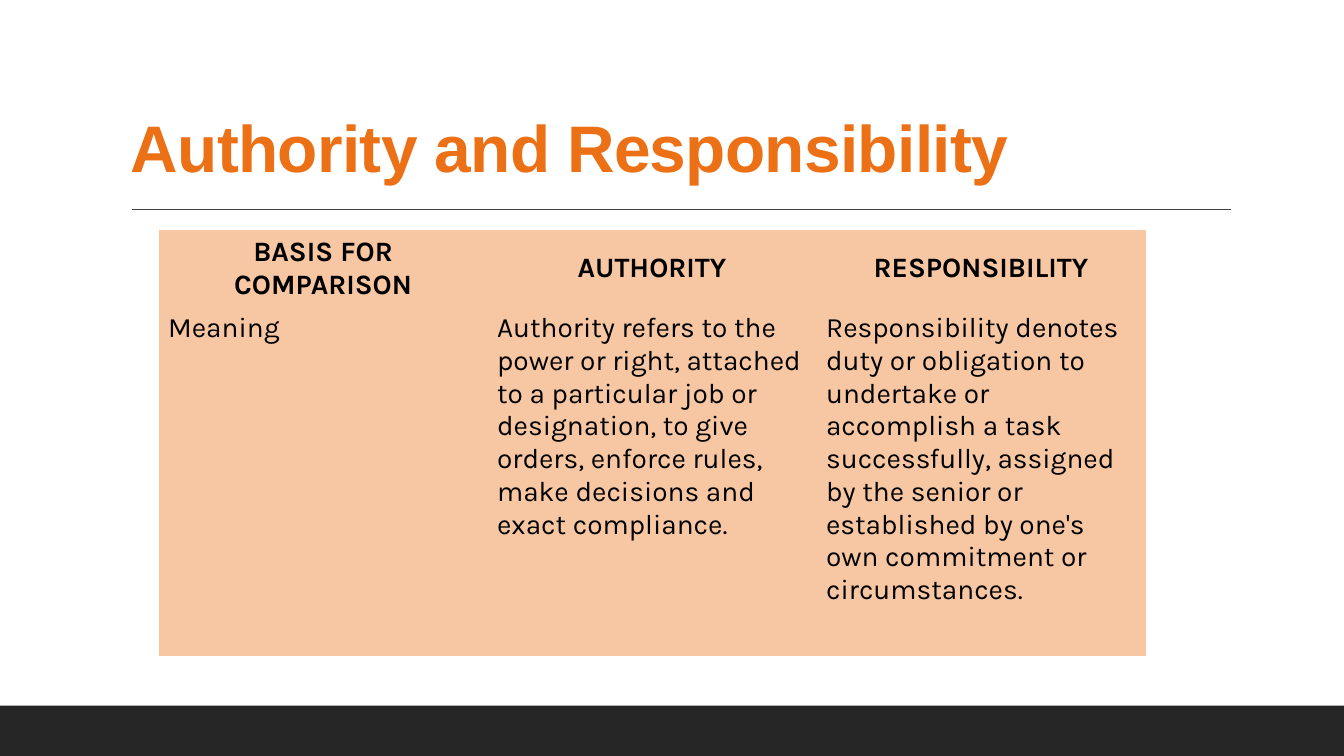
from pptx import Presentation
from pptx.dml.color import RGBColor
from pptx.enum.shapes import MSO_CONNECTOR, MSO_SHAPE
from pptx.enum.text import MSO_ANCHOR, PP_ALIGN
from pptx.oxml.ns import qn
from pptx.util import Pt
from lxml.etree import SubElement

COLORS = {
    "footer": "262626",
    "rule": "404040",
    "title": "EC7016",
    "cell": "F7C6A2",
    "text": "000000",
}
PLAIN_TABLE_STYLE = "{2D5ABB26-0587-4C30-8999-92F81FD0307C}"
COMPARISON = [
    ["BASIS FOR COMPARISON", "AUTHORITY", "RESPONSIBILITY"],
    [
        "Meaning",
        "Authority refers to the power or right, attached to a particular job or "
        "designation, to give orders, enforce rules, make decisions and exact compliance.",
        "Responsibility denotes duty or obligation to undertake or accomplish a task "
        "successfully, assigned by the senior or established by one's own commitment "
        "or circumstances.",
    ],
]


def color(name):
    return RGBColor.from_string(COLORS[name])


def format_run(run, font_name, size, color_name, bold):
    run.font.name = font_name
    run.font.size = Pt(size)
    run.font.bold = bold
    run.font.color.rgb = color(color_name)


def add_footer_band(slide):
    shape = slide.shapes.add_shape(MSO_SHAPE.RECTANGLE, Pt(0), Pt(504), Pt(960), Pt(36))
    shape.shadow.inherit = False
    shape.fill.solid()
    shape.fill.fore_color.rgb = color("footer")
    shape.line.fill.background()


def add_rule(slide):
    connector = slide.shapes.add_connector(
        MSO_CONNECTOR.STRAIGHT, Pt(94.3), Pt(149.5), Pt(879), Pt(149.5)
    )
    connector.line.color.rgb = color("rule")
    connector.line.width = Pt(1)
    SubElement(connector._element.spPr, qn("a:effectLst"))


def add_title(slide, text):
    shape = slide.shapes.add_textbox(Pt(86.4), Pt(22.5), Pt(792), Pt(114.5))
    text_frame = shape.text_frame
    text_frame.word_wrap = True
    text_frame.vertical_anchor = MSO_ANCHOR.BOTTOM
    text_frame.text = text
    paragraph = text_frame.paragraphs[0]
    paragraph.line_spacing = 0.9
    run = paragraph.runs[0]
    format_run(run, "Arial", 47, "title", True)
    run.font._element.set("spc", "-50")


def fill_cell(cell, text, is_header):
    cell.fill.solid()
    cell.fill.fore_color.rgb = color("cell")
    cell.margin_left = cell.margin_right = Pt(6.8)
    cell.margin_top = cell.margin_bottom = Pt(3.4)
    cell.vertical_anchor = MSO_ANCHOR.MIDDLE if is_header else MSO_ANCHOR.TOP
    cell.text_frame.text = text
    paragraph = cell.text_frame.paragraphs[0]
    paragraph.alignment = PP_ALIGN.CENTER if is_header else PP_ALIGN.LEFT
    format_run(paragraph.runs[0], "Karla", 20, "text", is_header)


def add_comparison_table(slide, rows):
    table = slide.shapes.add_table(
        len(rows), len(rows[0]), Pt(113.3), Pt(164.5), Pt(705), Pt(296)
    ).table
    table._tbl.tblPr.find(qn("a:tableStyleId")).text = PLAIN_TABLE_STYLE
    table.horz_banding = False
    for row, height in zip(table.rows, (47, 249)):
        row.height = Pt(height)
    for row_index, texts in enumerate(rows):
        for column_index, text in enumerate(texts):
            fill_cell(table.cell(row_index, column_index), text, row_index == 0)


def main():
    presentation = Presentation()
    presentation.slide_width = Pt(960)
    presentation.slide_height = Pt(540)
    slide = presentation.slides.add_slide(presentation.slide_layouts[6])
    add_footer_band(slide)
    add_rule(slide)
    add_title(slide, "Authority and Responsibility")
    add_comparison_table(slide, COMPARISON)
    presentation.save("out.pptx")


if __name__ == "__main__":
    main()
